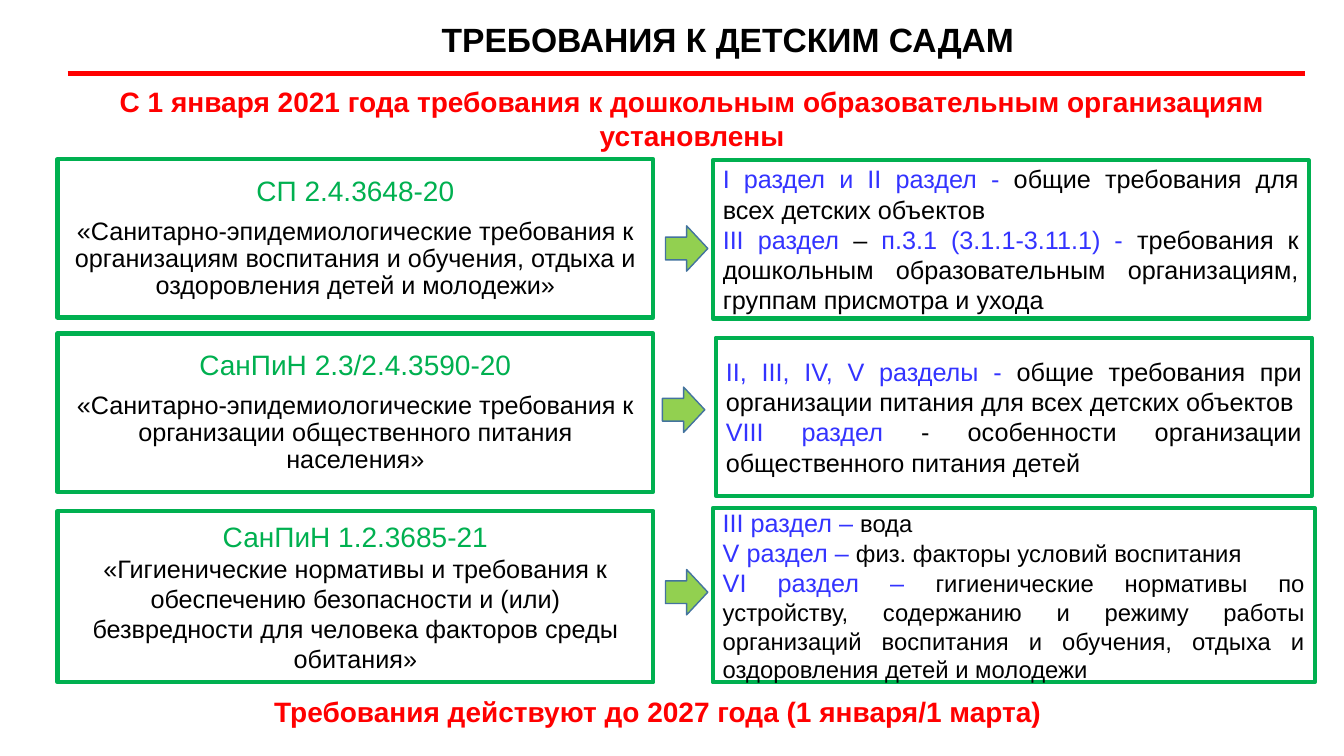
from dataclasses import dataclass

from lxml.etree import SubElement
from pptx import Presentation
from pptx.dml.color import RGBColor
from pptx.enum.shapes import MSO_CONNECTOR, MSO_SHAPE
from pptx.enum.text import MSO_ANCHOR as Anchor, MSO_AUTO_SIZE as AutoSize, PP_ALIGN as Align
from pptx.oxml.ns import qn
from pptx.util import Inches, Pt

RED, GREEN, BLUE, BLACK, WHITE = "FF0000", "00B050", "3333FF", "000000", "FFFFFF"
LIME, ARROW_EDGE = "92D050", "43739E"
FONT = "Arial"


@dataclass
class Area:
    left: float
    top: float
    width: float
    height: float

    def emu(self) -> tuple:
        return tuple(Inches(v) for v in (self.left, self.top, self.width, self.height))


@dataclass
class Phrase:
    text: str
    color: str = BLACK
    size: float = 18


@dataclass
class Line:
    phrases: list[Phrase]
    align: Align = Align.JUSTIFY
    spacing: float = 1.0
    after: float = 0
    bold: bool = False


@dataclass
class Rule:
    document: Area
    arrow: Area
    sections: Area
    code: str
    name: str
    details: list[list[Phrase]]
    spacing: float = 0.9
    code_gap: float = 8


def rgb(value: str) -> RGBColor:
    return RGBColor.from_string(value)


def write(frame, lines: list[Line], anchor: Anchor) -> None:
    frame.word_wrap = True
    frame.auto_size = AutoSize.NONE
    frame.vertical_anchor = anchor
    for index, line in enumerate(lines):
        paragraph = frame.add_paragraph() if index else frame.paragraphs[0]
        paragraph.alignment = line.align
        paragraph.line_spacing = line.spacing
        paragraph.space_before = Pt(0)
        paragraph.space_after = Pt(line.after)
        paragraph.font.name = FONT
        paragraph.font.bold = line.bold
        same_size = len({phrase.size for phrase in line.phrases}) == 1
        same_color = len({phrase.color for phrase in line.phrases}) == 1
        if same_size:
            paragraph.font.size = Pt(line.phrases[0].size)
        if same_color:
            paragraph.font.color.rgb = rgb(line.phrases[0].color)
        for phrase in line.phrases:
            run = paragraph.add_run()
            run.text = phrase.text
            if not same_size:
                run.font.size = Pt(phrase.size)
            if not same_color:
                run.font.color.rgb = rgb(phrase.color)


def add_filled(slide, kind: MSO_SHAPE, area: Area, fill: str, edge: str, width: float):
    shape = slide.shapes.add_shape(kind, *area.emu())
    shape.shadow.inherit = False
    shape.fill.solid()
    shape.fill.fore_color.rgb = rgb(fill)
    shape.line.color.rgb = rgb(edge)
    shape.line.width = Pt(width)
    return shape


def add_framed(slide, area: Area, lines: list[Line]) -> None:
    box = add_filled(slide, MSO_SHAPE.RECTANGLE, area, WHITE, GREEN, 3)
    write(box.text_frame, lines, Anchor.MIDDLE)


def add_rule(slide, rule: Rule) -> None:
    add_framed(slide, rule.document, [
        Line([Phrase(rule.code, GREEN, 20)], Align.CENTER, rule.spacing, rule.code_gap),
        Line([Phrase(rule.name)], Align.CENTER, rule.spacing),
    ])
    add_framed(slide, rule.sections, [Line(phrases) for phrases in rule.details])
    add_filled(slide, MSO_SHAPE.RIGHT_ARROW, rule.arrow, LIME, ARROW_EDGE, 1)


def add_statement(slide, area: Area, text: str) -> None:
    box = slide.shapes.add_textbox(*area.emu())
    write(box.text_frame, [Line([Phrase(text, RED, 20)], Align.CENTER, bold=True)], Anchor.TOP)


def add_underline(slide, left: float, right: float, top: float) -> None:
    underline = slide.shapes.add_connector(
        MSO_CONNECTOR.STRAIGHT, Inches(left), Inches(top), Inches(right), Inches(top))
    underline.line.color.rgb = rgb(RED)
    underline.line.width = Pt(3)
    SubElement(underline._element.spPr, qn("a:effectLst"))


RULES = [
    Rule(
        Area(0.57, 1.58, 5.91, 1.57), Area(6.6, 2.24, 0.42, 0.45), Area(7.07, 1.59, 5.91, 1.57),
        "СП 2.4.3648-20",
        "«Санитарно-эпидемиологические требования к организациям воспитания и обучения, "
        "отдыха и оздоровления детей и молодежи»",
        [
            [Phrase("I раздел и II раздел - ", BLUE),
             Phrase("общие требования для всех детских объектов")],
            [Phrase("III раздел ", BLUE), Phrase("– "), Phrase("п.3.1 (3.1.1-3.11.1) - ", BLUE),
             Phrase("требования к дошкольным образовательным организациям, "
                    "группам присмотра и ухода")],
        ],
    ),
    Rule(
        Area(0.57, 3.31, 5.91, 1.57), Area(6.57, 3.84, 0.42, 0.45), Area(7.1, 3.35, 5.91, 1.57),
        "СанПиН 2.3/2.4.3590-20",
        "«Санитарно-эпидемиологические требования к организации общественного питания населения»",
        [
            [Phrase("II, III, IV, V разделы - ", BLUE),
             Phrase("общие требования при организации питания для всех детских объектов")],
            [Phrase("VIII раздел ", BLUE),
             Phrase("- особенности организации общественного питания детей")],
        ],
    ),
    Rule(
        Area(0.57, 5.07, 5.91, 1.7), Area(6.6, 5.65, 0.42, 0.45), Area(7.07, 5.04, 5.97, 1.73),
        "СанПиН 1.2.3685-21",
        "«Гигиенические нормативы и требования к обеспечению безопасности и (или) "
        "безвредности для человека факторов среды обитания»",
        [
            [Phrase("III раздел – ", BLUE), Phrase("вода", size=17)],
            [Phrase("V раздел – ", BLUE), Phrase("физ. факторы условий воспитания", size=17)],
            [Phrase("VI раздел – ", BLUE),
             Phrase("гигиенические нормативы по устройству, содержанию и режиму работы "
                    "организаций воспитания и обучения, отдыха и оздоровления детей и молодежи",
                    size=17)],
        ],
        spacing=1.0, code_gap=0,
    ),
]


def main() -> None:
    deck = Presentation()
    deck.slide_width, deck.slide_height = Inches(13.33), Inches(7.5)
    slide = deck.slides.add_slide(deck.slide_layouts[5])

    heading = slide.shapes.title
    heading.left, heading.top, heading.width, heading.height = Area(1.81, 0.14, 10.82, 0.5).emu()
    write(heading.text_frame,
          [Line([Phrase("ТРЕБОВАНИЯ К ДЕТСКИМ САДАМ", size=24)], Align.CENTER, bold=True)],
          Anchor.TOP)

    add_underline(slide, 0.67, 12.94, 0.73)
    add_statement(slide, Area(0.8, 0.79, 12.13, 0.77),
                  "С 1 января 2021 года требования к дошкольным образовательным "
                  "организациям установлены")
    for rule in RULES:
        add_rule(slide, rule)
    add_statement(slide, Area(0.46, 6.84, 12.13, 0.44),
                  "Требования действуют до 2027 года (1 января/1 марта)")
    deck.save("out.pptx")


if __name__ == "__main__":
    main()
